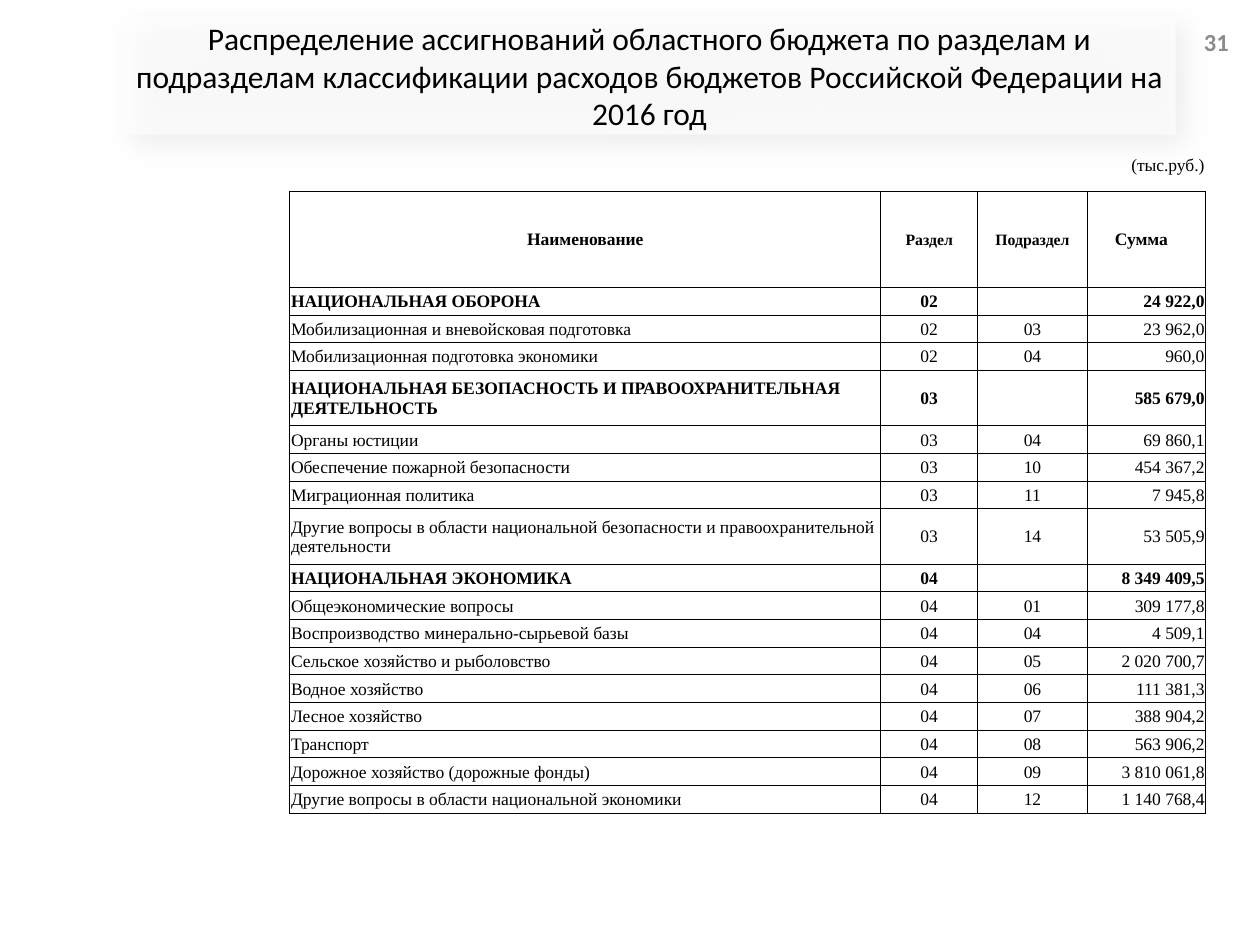
from dataclasses import dataclass

from lxml import etree
from pptx import Presentation
from pptx import util as u
from pptx.dml.color import RGBColor
from pptx.enum import shapes, text
from pptx.oxml.ns import qn

LEFT, CENTER, RIGHT = text.PP_ALIGN.LEFT, text.PP_ALIGN.CENTER, text.PP_ALIGN.RIGHT


@dataclass(frozen=True)
class Theme:
    ink: str = "000000"
    paper: str = "FFFFFF"
    muted: str = "8C8C8C"
    heading_font: str = "Calibri"
    table_font: str = "Times New Roman"
    title_size: int = 18
    number_size: int = 14
    body_size: int = 10
    small_size: int = 9
    rule: float = 0.5


def child(parent, tag, **attrs):
    el = etree.SubElement(parent, qn(tag))
    for key, value in attrs.items():
        el.set(key, str(value))
    return el


class Deck:
    COLS, ROWS = 100, 75

    def __init__(self, theme):
        self.theme = theme
        self.prs = Presentation()
        self.prs.slide_width, self.prs.slide_height = u.Inches(10), u.Inches(7.5)
        self.s = self.prs.slides.add_slide(self.prs.slide_layouts[6])
        self.s.background.fill.solid()
        self.s.background.fill.fore_color.rgb = RGBColor.from_string(theme.paper)

    def x(self, cols):
        return round(self.prs.slide_width * cols / self.COLS)

    def y(self, rows):
        return round(self.prs.slide_height * rows / self.ROWS)

    def box(self, x, y, w, h):
        return self.x(x), self.y(y), self.x(w), self.y(h)

    def set_text(self, tf, words, size, font, align, bold=False, color=None):
        tf.word_wrap = True
        p = tf.paragraphs[0]
        p.text = words
        p.alignment = align
        for r in p.runs:
            r.font.size, r.font.name, r.font.bold = u.Pt(size), font, bold
            r.font.color.rgb = RGBColor.from_string(color or self.theme.ink)
        if not words:
            child(p._p, "a:endParaRPr", sz=size * 100)

    def title(self, words, *place):
        t = self.theme
        sp = self.s.shapes.add_shape(shapes.MSO_SHAPE.RECTANGLE, *self.box(*place))
        sp.fill.solid()
        sp.fill.fore_color.rgb = RGBColor.from_string(t.paper)
        fill = sp._element.spPr.find(qn("a:solidFill"))
        child(fill[0], "a:alpha", val=65000)
        sp.line.fill.background()
        sp.shadow.inherit = False
        effects = sp._element.spPr.find(qn("a:effectLst"))
        shadow = child(effects, "a:outerShdw", blurRad=u.Pt(16), dist=u.Pt(7),
                       dir=45 * 60000, algn="tl", rotWithShape=0)
        child(child(shadow, "a:srgbClr", val=t.ink), "a:alpha", val=10000)
        sp.text_frame.vertical_anchor = text.MSO_ANCHOR.MIDDLE
        self.set_text(sp.text_frame, words, t.title_size, t.heading_font, CENTER)

    def page_number(self, words, *place):
        t = self.theme
        tf = self.s.shapes.add_textbox(*self.box(*place)).text_frame
        tf.vertical_anchor = text.MSO_ANCHOR.MIDDLE
        self.set_text(tf, words, t.number_size, t.heading_font, RIGHT, True, t.muted)

    def borders(self, cell, sides):
        tc_pr = cell._tc.get_or_add_tcPr()
        for side in "LRTB":
            ln = child(tc_pr, f"a:ln{side}", w=u.Pt(self.theme.rule))
            if side in sides:
                child(child(ln, "a:solidFill"), "a:srgbClr", val=self.theme.ink)
            else:
                child(ln, "a:noFill")

    def cell(self, cell, words, align, bold=False, size=None, sides="LRTB"):
        t = self.theme
        cell.margin_left = cell.margin_right = cell.margin_top = u.Inches(0.01)
        cell.margin_bottom = 0
        cell.vertical_anchor = text.MSO_ANCHOR.MIDDLE
        self.borders(cell, sides)
        cell.fill.background()
        self.set_text(cell.text_frame, words, size or t.body_size, t.table_font, align, bold)

    def budget_table(self, unit, header, records, widths, heights, x, y):
        t = self.theme
        frame = self.s.shapes.add_table(len(heights), len(widths),
                                        *self.box(x, y, sum(widths), sum(heights)))
        tbl = frame.table
        tbl.first_row = tbl.horz_banding = False
        for col, width in zip(tbl.columns, widths):
            col.width = self.x(width)
        for row, height in zip(tbl.rows, heights):
            row.height = self.y(height)

        for c in range(len(widths)):
            self.cell(tbl.cell(0, c), "" if c else unit, RIGHT, sides="B")
        tbl.cell(0, 0).vertical_anchor = text.MSO_ANCHOR.TOP
        tbl.cell(0, 0).merge(tbl.cell(0, len(widths) - 1))

        sizes = [t.body_size, t.small_size, t.small_size, t.body_size]
        for c, (words, size) in enumerate(zip(header, sizes)):
            self.cell(tbl.cell(1, c), words, CENTER, True, size)
        tbl.cell(1, len(widths) - 1).margin_right = u.Inches(0.09)

        for n, record in enumerate(records, 2):
            is_section = not record[2]
            for c, (words, align) in enumerate(zip(record, [LEFT, CENTER, CENTER, RIGHT])):
                self.cell(tbl.cell(n, c), words, align, is_section)


HEADER = ["Наименование", "Раздел", "Подраздел", "Сумма"]
RECORDS = [
    ("НАЦИОНАЛЬНАЯ ОБОРОНА", "02", "", "24 922,0"),
    ("Мобилизационная и вневойсковая подготовка", "02", "03", "23 962,0"),
    ("Мобилизационная подготовка экономики", "02", "04", "960,0"),
    ("НАЦИОНАЛЬНАЯ БЕЗОПАСНОСТЬ И ПРАВООХРАНИТЕЛЬНАЯ ДЕЯТЕЛЬНОСТЬ", "03", "", "585 679,0"),
    ("Органы юстиции", "03", "04", "69 860,1"),
    ("Обеспечение пожарной безопасности", "03", "10", "454 367,2"),
    ("Миграционная политика", "03", "11", "7 945,8"),
    ("Другие вопросы в области национальной безопасности и правоохранительной деятельности",
     "03", "14", "53 505,9"),
    ("НАЦИОНАЛЬНАЯ ЭКОНОМИКА", "04", "", "8 349 409,5"),
    ("Общеэкономические вопросы", "04", "01", "309 177,8"),
    ("Воспроизводство минерально-сырьевой базы", "04", "04", "4 509,1"),
    ("Сельское хозяйство и рыболовство", "04", "05", "2 020 700,7"),
    ("Водное хозяйство", "04", "06", "111 381,3"),
    ("Лесное хозяйство", "04", "07", "388 904,2"),
    ("Транспорт", "04", "08", "563 906,2"),
    ("Дорожное хозяйство (дорожные фонды)", "04", "09", "3 810 061,8"),
    ("Другие вопросы в области национальной экономики", "04", "12", "1 140 768,4"),
]
COL_WIDTHS = [46.9, 7.7, 8.7, 9.4]
LINE, LONG_NAME = 2.2, 55


def main():
    deck = Deck(Theme())
    deck.title("Распределение ассигнований областного бюджета по разделам и подразделам "
               "классификации расходов бюджетов Российской Федерации на 2016 год",
               9.8, 1.3, 83.5, 9.4)
    heights = [2.9, 7.6] + [LINE * (2 if len(name) > LONG_NAME else 1) for name, *_ in RECORDS]
    deck.budget_table("(тыс.руб.)", HEADER, RECORDS, COL_WIDTHS, heights, 23, 12.3)
    deck.page_number("31", 91.7, 1.3, 6.8, 4)
    deck.prs.save("out.pptx")


if __name__ == "__main__":
    main()
